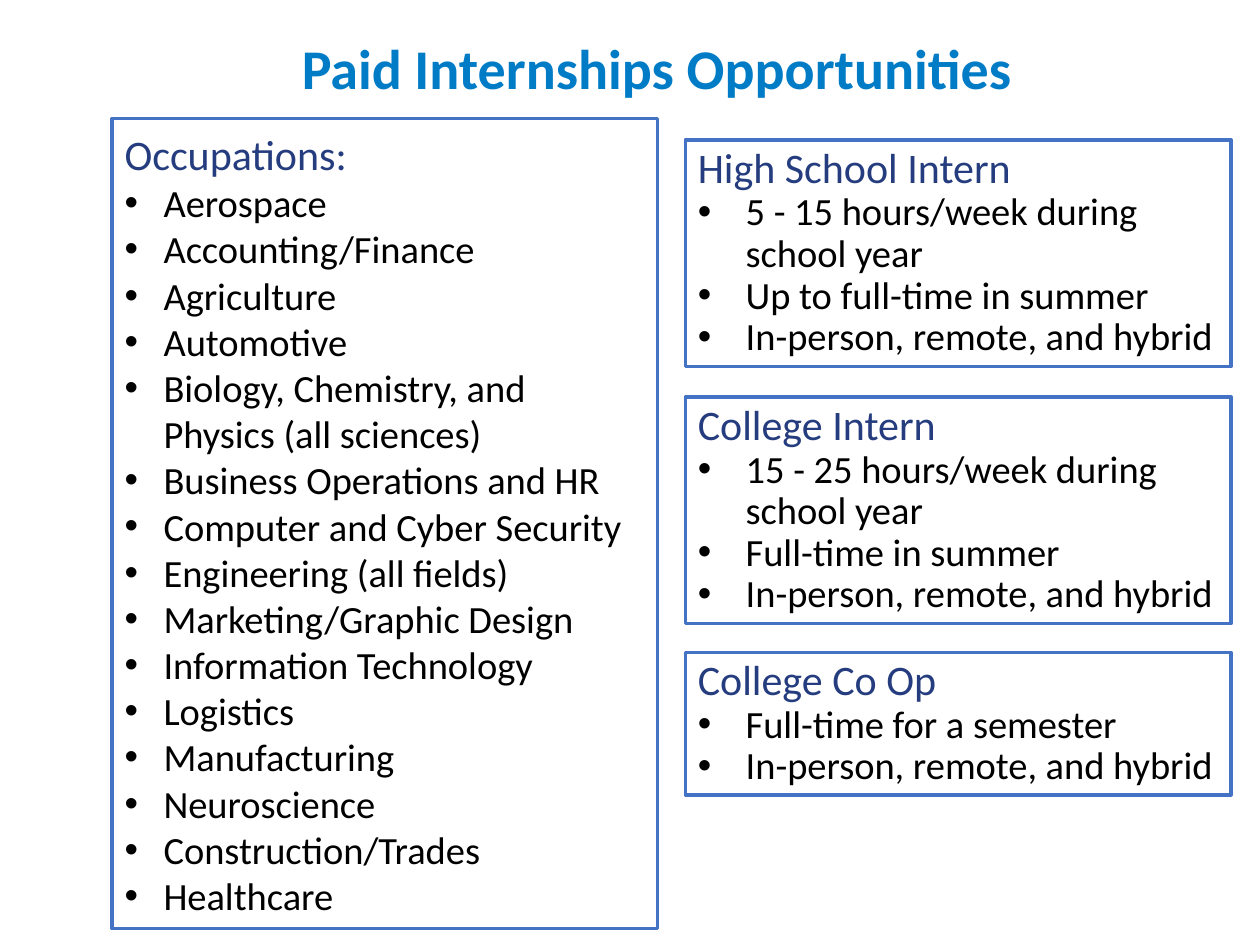
from lxml import etree
from pptx import Presentation
from pptx.dml.color import RGBColor
from pptx.enum.shapes import MSO_SHAPE
from pptx.enum.text import MSO_ANCHOR, PP_ALIGN
from pptx.oxml.ns import qn
from pptx.util import Inches, Pt

RECTANGLE = MSO_SHAPE.RECTANGLE
TOP, MIDDLE = MSO_ANCHOR.TOP, MSO_ANCHOR.MIDDLE
LEFT, CENTER = PP_ALIGN.LEFT, PP_ALIGN.CENTER
FONT = "Calibri"
TITLE_BLUE, HEADING_BLUE, BORDER_BLUE = "007CC6", "253D7F", "4472C4"
BOX_WIDTH = 4.33
LEFT_COLUMN, RIGHT_COLUMN = 0.89, 5.44


def set_font(para, size, color, bold=False):
    for span in para.runs:
        span.font.name = FONT
        span.font.size = Pt(size)
        span.font.bold = bold
        span.font.color.rgb = RGBColor.from_string(color)


def add_bullet(para, indent):
    """Give the paragraph a round bullet with a hanging indent in inches."""
    properties = para._p.get_or_add_pPr()
    properties.set("marL", str(Inches(indent)))
    properties.set("indent", str(-Inches(indent)))
    etree.SubElement(properties, qn("a:buFont")).set("typeface", "Arial")
    etree.SubElement(properties, qn("a:buChar")).set("char", "•")


deck = Presentation()
deck.slide_width, deck.slide_height = Inches(10), Inches(7.5)
page = deck.slides.add_slide(deck.slide_layouts[6])

title = page.shapes.add_textbox(Inches(1.18), Inches(0.22), Inches(8.07), Inches(0.88))
title.text_frame.word_wrap = True
title.text_frame.vertical_anchor = TOP
title.text_frame.text = "Paid Internships Opportunities"
title.text_frame.paragraphs[0].alignment = CENTER
set_font(title.text_frame.paragraphs[0], 32, TITLE_BLUE, bold=True)

occupations = [
    "Aerospace", "Accounting/Finance", "Agriculture", "Automotive",
    "Biology, Chemistry, and Physics (all sciences)",
    "Business Operations and HR", "Computer and Cyber Security",
    "Engineering (all fields)", "Marketing/Graphic Design",
    "Information Technology", "Logistics", "Manufacturing", "Neuroscience",
    "Construction/Trades", "Healthcare",
]
work_modes = "In-person, remote, and hybrid"

# left, top, height, bullet indent, line spacing, heading, items
panels = [
    (LEFT_COLUMN, 0.94, 6.43, 0.31, 1.0, "Occupations:", occupations),
    (RIGHT_COLUMN, 1.11, 1.8, 0.38, 0.9, "High School Intern",
     ["5 - 15 hours/week during school year", "Up to full-time in summer", work_modes]),
    (RIGHT_COLUMN, 3.15, 1.8, 0.38, 0.9, "College Intern",
     ["15 - 25 hours/week during school year", "Full-time in summer", work_modes]),
    (RIGHT_COLUMN, 5.18, 1.13, 0.38, 0.9, "College Co Op",
     ["Full-time for a semester", work_modes]),
]

for left, top, height, indent, spacing, heading, items in panels:
    box = page.shapes.add_shape(
        RECTANGLE, Inches(left), Inches(top), Inches(BOX_WIDTH), Inches(height))
    box.shadow.inherit = False
    box.fill.solid()
    box.fill.fore_color.rgb = RGBColor.from_string("FFFFFF")
    box.line.color.rgb = RGBColor.from_string(BORDER_BLUE)
    box.line.width = Pt(2)

    frame = box.text_frame
    frame.word_wrap = True
    frame.vertical_anchor = MIDDLE
    frame.text = "\n".join([heading] + items)
    for number, para in enumerate(frame.paragraphs):
        para.alignment = LEFT
        para.line_spacing = spacing
        if number == 0:
            set_font(para, 24, HEADING_BLUE)
        else:
            add_bullet(para, indent)
            set_font(para, 22, "000000")

deck.save("out.pptx")
